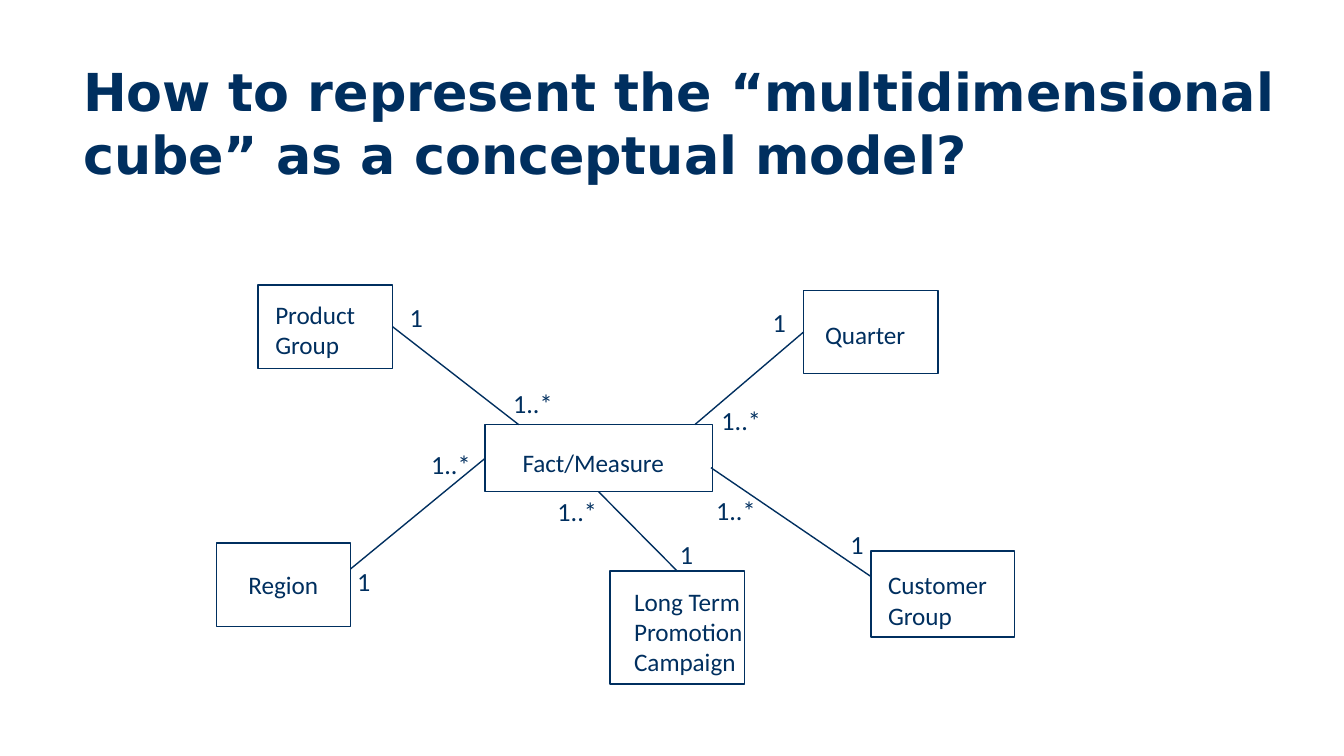
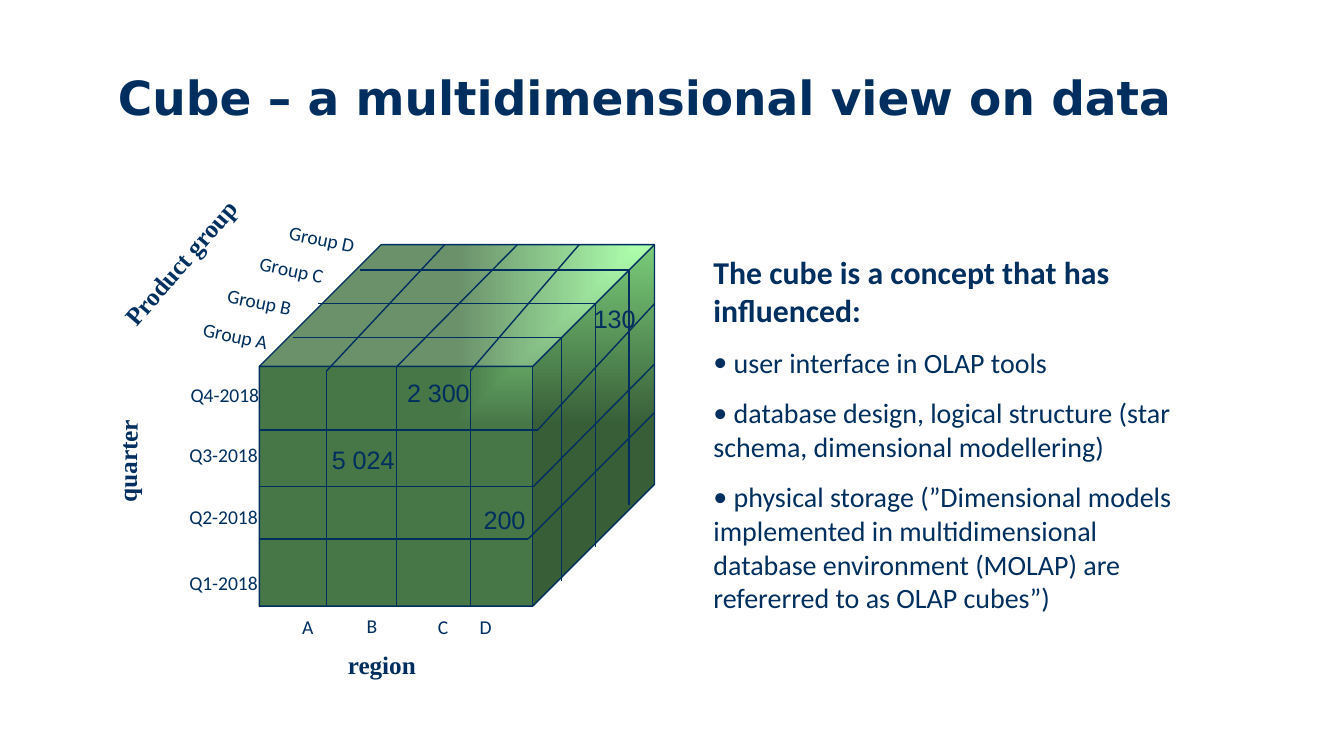
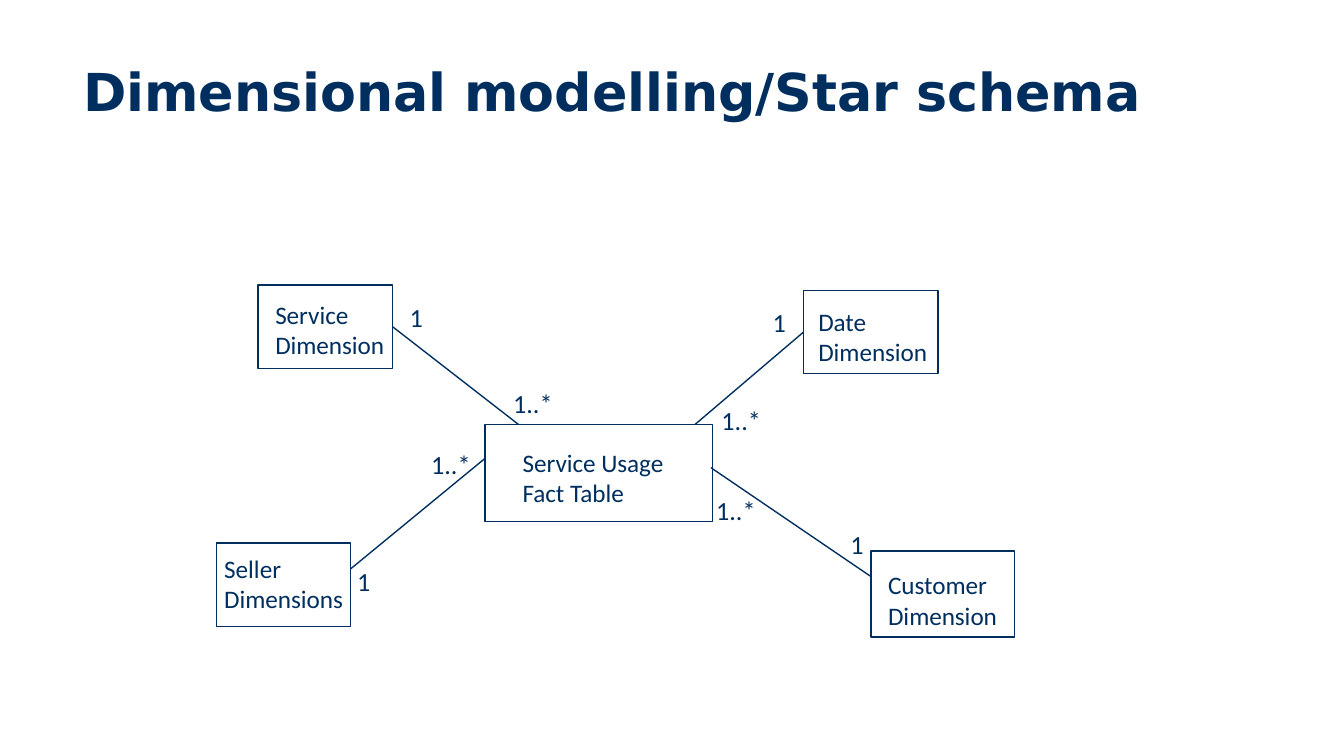
from lxml import etree
from pptx import Presentation
from pptx.dml.color import RGBColor
from pptx.enum.shapes import MSO_CONNECTOR, MSO_SHAPE
from pptx.enum.text import MSO_ANCHOR, MSO_AUTO_SIZE
from pptx.oxml.ns import qn
from pptx.util import Pt

# Style
PX = 9144  # EMU in one px, 100 px to the inch
NAVY = RGBColor(0x00, 0x2F, 0x5F)
WHITE = RGBColor(0xFF, 0xFF, 0xFF)
LIGHT_GREEN = RGBColor(0x99, 0xFF, 0x99)
DARK_GREEN = RGBColor(0x47, 0x76, 0x47)
TITLE_FONT, BODY_FONT = "DejaVu Sans", "Calibri"
AXIS_FONT, VALUE_FONT = "Times New Roman", "Arial"
RECT, CUBE = MSO_SHAPE.RECTANGLE, MSO_SHAPE.CUBE
STRAIGHT = MSO_CONNECTOR.STRAIGHT
TOP = MSO_ANCHOR.TOP
GROW, FIXED = MSO_AUTO_SIZE.SHAPE_TO_FIT_TEXT, MSO_AUTO_SIZE.NONE
SIDE_TOP, SIDE_LEFT, SIDE_BOTTOM, SIDE_RIGHT = range(4)


class Deck:
    """Holds the presentation, its style and the current slide."""

    def __init__(self, width):
        self.prs = Presentation()
        self.prs.slide_width = width * PX
        self.prs.slide_height = width * PX * 9 // 16
        self.shapes = None

    def slide(self):
        s = self.prs.slides.add_slide(self.prs.slide_layouts[6])
        self.shapes = s.shapes

    def font(self, p, size, font=BODY_FONT, bold=False):
        for r in p.runs:
            r.font.name, r.font.size, r.font.bold = font, Pt(size), bold
            r.font.color.rgb = NAVY

    def text(self, x, y, w, h, text, size=13.5, font=BODY_FONT, bold=False,
             wrap=True, rot=0):
        sp = self.shapes.add_textbox(x * PX, y * PX, w * PX, h * PX)
        sp.rotation = rot
        tf = sp.text_frame
        tf.text = text
        tf.word_wrap, tf.auto_size, tf.vertical_anchor = wrap, GROW, TOP
        for p in tf.paragraphs:
            self.font(p, size, font, bold)
        return tf

    def title(self, x, y, w, h, text, size=28):
        tf = self.text(x, y, w, h, text, size, TITLE_FONT, True)
        tf.auto_size = FIXED

    def bullets(self, x, y, w, h, heading, items):
        tf = self.text(x, y, w, h, heading, 17, bold=True)
        for item in items:
            p = tf.add_paragraph()
            p.text = item
            p.space_before = Pt(9)
            pPr = p._p.get_or_add_pPr()
            pPr.set("marL", "0")
            pPr.set("indent", "0")
            etree.SubElement(pPr, qn("a:buFont")).set("typeface", BODY_FONT)
            etree.SubElement(pPr, qn("a:buChar")).set("char", "•")
            self.font(p, 15)

    def shape(self, kind, x, y, w, h):
        sp = self.shapes.add_shape(kind, x * PX, y * PX, w * PX, h * PX)
        sp.shadow.inherit = False
        sp.fill.solid()
        sp.fill.fore_color.rgb = WHITE
        sp.line.color.rgb, sp.line.width = NAVY, Pt(0.75)
        return sp

    def cube(self, x, y, w, h, depth):
        sp = self.shape(CUBE, x, y, w, h)
        sp.adjustments[0] = depth
        sp.fill.gradient()
        stops = sp.fill.gradient_stops
        for stop, place, color in zip(stops, (0, 1), (LIGHT_GREEN, DARK_GREEN)):
            stop.position, stop.color.rgb = place, color
        # Shade outwards from the upper right corner
        grad = sp._element.spPr.find(qn("a:gradFill"))
        grad.remove(grad.find(qn("a:lin")))
        path = etree.SubElement(grad, qn("a:path"))
        path.set("path", "rect")
        corner = etree.SubElement(path, qn("a:fillToRect"))
        corner.set("l", "100000")
        corner.set("b", "100000")

    def line(self, x1, y1, x2, y2, begin=None, end=None):
        cn = self.shapes.add_connector(STRAIGHT, x1 * PX, y1 * PX, x2 * PX, y2 * PX)
        cn.line.color.rgb, cn.line.width = NAVY, Pt(0.75)
        etree.SubElement(cn._element.spPr, qn("a:effectLst"))
        if begin:
            cn.begin_connect(*begin)
        if end:
            cn.end_connect(*end)


def star(deck, title, fact_height, labels, campaign=False):
    """Draws a fact box surrounded by its dimensions."""
    deck.slide()
    deck.title(52, 39, 928, 65, title)

    # Boxes and the lines between them
    if campaign:
        promo = deck.shape(RECT, 454, 425, 100, 84)
    upper_right = deck.shape(RECT, 598, 216, 100, 62)
    deck.shape(RECT, 648, 410, 107, 64)
    upper_left = deck.shape(RECT, 192, 212, 100, 62)
    fact = deck.shape(RECT, 361, 316, 169, fact_height)
    deck.line(254, 429, 361, 341, end=(fact, SIDE_LEFT) if campaign else None)
    deck.line(517, 316, 598, 248, end=(upper_right, SIDE_LEFT))
    deck.line(292, 241, 386, 316, begin=(upper_left, SIDE_RIGHT))
    deck.line(529, 348, 648, 429)
    if campaign:
        deck.line(448, 366, 504, 425, (fact, SIDE_BOTTOM), (promo, SIDE_TOP))
    deck.shape(RECT, 161, 404, 100, 62)

    # Names
    for x, y, w, h, name, wrap in labels:
        deck.text(x, y, w, h, name, wrap=wrap)

    # Multiplicities
    many = [(527, 296), (523, 363), (311, 329), (372, 283)]
    one = [(295, 219), (565, 223), (623, 388), (256, 416)]
    if campaign:
        many.append((405, 364))
        one.append((496, 396))
    for mark, width, places in (("1..*", 50, many), ("1", 30, one)):
        for x, y in places:
            deck.text(x, y, width, 34, mark, 14, wrap=False)


def cube_slide(deck):
    deck.slide()
    deck.bullets(521, 183, 382, 307, "The cube is a concept that has influenced:", [
        " user interface in OLAP tools",
        " database design, logical structure (star schema, dimensional modellering)",
        " physical storage (”Dimensional models implemented in multidimensional "
        "database environment (MOLAP) are refererred to as OLAP cubes”)",
    ])
    deck.title(78, 46, 836, 94, "Cube – a multidimensional view on data", 25.2)

    # Cube with its grid: each cut runs over two faces
    left, top, right, bottom = 193, 182, 487, 451
    deck.cube(left, top, right - left, bottom - top, 0.337)
    for x, y, back_x in ((243, 276, 331), (295, 273, 385), (350, 276, 431)):
        deck.line(x, y, x, bottom)
        deck.line(x, y, back_x, top)
    for x, y, back_y in ((400, 320, 226), (397, 362, 271), (393, 401, 307)):
        deck.line(x, y, left, y)
        deck.line(x, y, right, back_y)
    for x, y, end_x, end_y in ((418, 251, 218, 432), (443, 226, 237, 407),
                               (468, 201, 268, 376)):
        deck.line(x, y, end_x, y)
        deck.line(x, y, x, end_y)

    # Axis names
    for x, y, w, name, rot in ((54, 326, 82, "quarter", 271),
                               (66, 178, 138, "Product group", 311),
                               (249, 478, 71, "region", 0)):
        deck.text(x, y, w, 33, name, 13.5, AXIS_FONT, True, False, rot)

    # Cell values
    for x, y, w, value in ((293, 276, 68, "2 300"), (350, 370, 52, "200"),
                           (432, 221, 52, "130"), (237, 326, 68, "5 024")):
        deck.text(x, y, w, 33, value, font=VALUE_FONT, wrap=False)

    # Axis members
    for n, (x, y) in enumerate(((131, 420), (131, 371), (131, 325), (132, 280)), 1):
        deck.text(x, y, 89, 28, f"Q{n}-2018", 10.5)
    for name, x, y, w, h in (("A", 215, 453, 53, 45), ("B", 263, 452, 53, 28),
                             ("C", 316, 453, 53, 28), ("D", 347, 453, 80, 28)):
        deck.text(x, y, w, h, name, 10.5)
    for name, x, y in (("A", 141, 238), ("B", 159, 213), ("C", 183, 189),
                       ("D", 205, 166)):
        deck.text(x, y, 89, 28, f"Group {name}", 10.5, rot=11.8)


def main():
    deck = Deck(1000)
    star(deck, "How to represent the “multidimensional cube” as a conceptual model?", 50, [
        (462, 431, 111, 78, "Long Term Promotion Campaign", True),
        (195, 218, 103, 56, "Product Group", True),
        (651, 419, 123, 56, "Customer Group", True),
        (379, 328, 306, 33, "Fact/Measure", True),
        (175, 419, 73, 33, "Region", False),
        (604, 233, 81, 33, "Quarter", False),
    ], campaign=True)
    cube_slide(deck)
    star(deck, "Dimensional modelling/Star schema", 72, [
        (195, 218, 103, 56, "Service\nDimension", True),
        (651, 419, 123, 56, "Customer Dimension", True),
        (379, 328, 194, 56, "Service Usage\nFact Table", True),
        (157, 407, 111, 56, "Seller Dimensions", True),
        (599, 223, 102, 56, "Date\nDimension", False),
    ])
    deck.prs.save("out.pptx")


if __name__ == "__main__":
    main()
